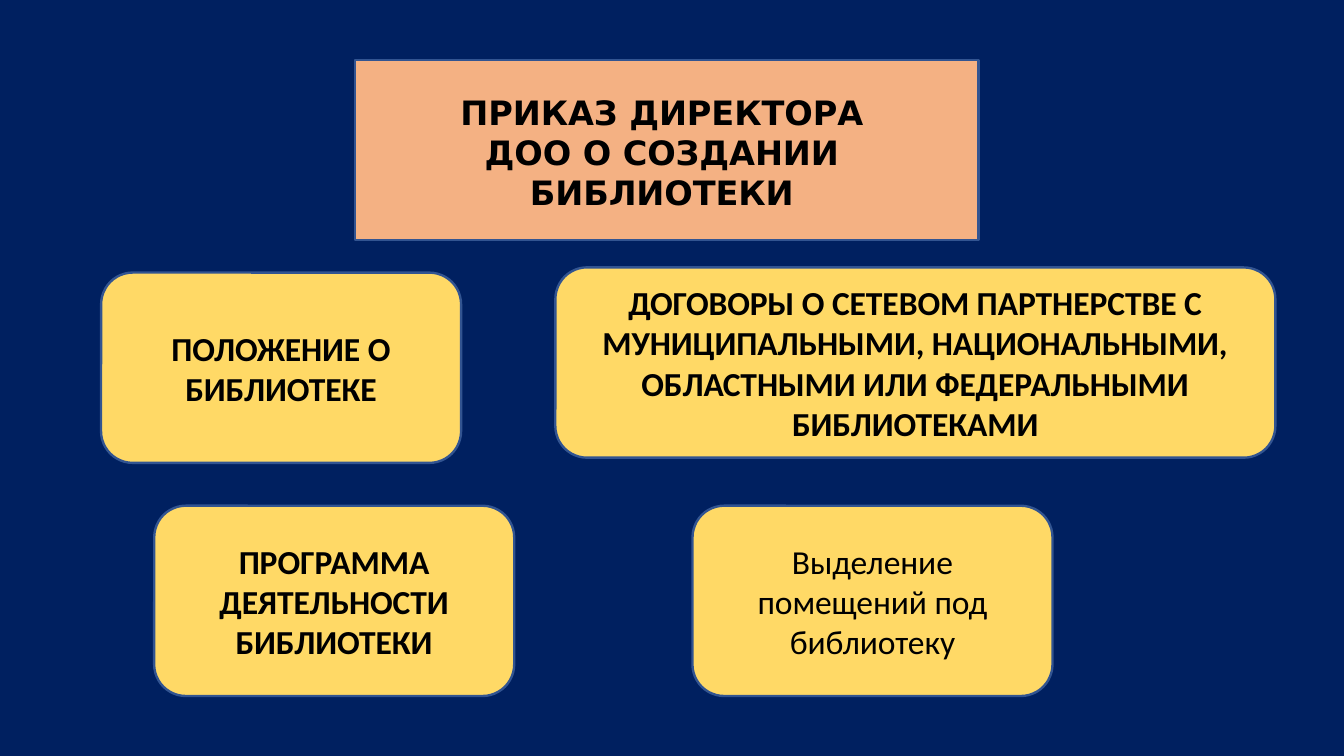
from pptx import Presentation
from pptx.dml.color import RGBColor
from pptx.enum.shapes import MSO_SHAPE as Shape
from pptx.enum.text import MSO_ANCHOR as Anchor, MSO_AUTO_SIZE as AutoSize, PP_ALIGN as Align
from pptx.util import Pt

COLOURS = {
    "background": "002060",
    "order": "F4B183",
    "document": "FFD966",
    "outline": "325491",
    "text": "000000",
}
TITLE_ONLY = 5
CARD_WIDTH, CARD_HEIGHT = 151.2, 79.9
TEXT_SIZE = 14.1

# left, top, width, paragraphs, bold
DOCUMENTS = [
    (42.5, 114.5, CARD_WIDTH, ["ПОЛОЖЕНИЕ О БИБЛИОТЕКЕ"], True),
    (233.3, 112.3, 2 * CARD_WIDTH,
     ["ДОГОВОРЫ О СЕТЕВОМ ПАРТНЕРСТВЕ С МУНИЦИПАЛЬНЫМИ, НАЦИОНАЛЬНЫМИ, "
      "ОБЛАСТНЫМИ ИЛИ ФЕДЕРАЛЬНЫМИ БИБЛИОТЕКАМИ"], True),
    (290.9, 212.4, CARD_WIDTH, ["Выделение помещений под библиотеку"], False),
    (64.8, 212.4, CARD_WIDTH, ["ПРОГРАММА", "ДЕЯТЕЛЬНОСТИ БИБЛИОТЕКИ"], True),
]


def colour(name):
    return RGBColor.from_string(COLOURS[name])


def paint(shape, fill):
    shape.fill.solid()
    shape.fill.fore_color.rgb = colour(fill)
    shape.line.color.rgb = colour("outline")
    shape.line.width = Pt(1)


def write(frame, paragraphs, font, bold):
    frame.word_wrap = True
    frame.auto_size = AutoSize.NONE
    frame.vertical_anchor = Anchor.MIDDLE
    frame.text = "\n".join(paragraphs)
    for para in frame.paragraphs:
        para.alignment = Align.CENTER
        para.line_spacing = 1.0
        para.space_before = Pt(0)
        para.font.name = font
        para.font.size = Pt(TEXT_SIZE)
        para.font.bold = bold
        para.font.color.rgb = colour("text")


def add_order(page, left, top, width, height):
    """Place the director's order, which is the slide title."""
    title = page.shapes.title
    title.left, title.top = Pt(left), Pt(top)
    title.width, title.height = Pt(width), Pt(height)
    paint(title, "order")
    frame = title.text_frame
    write(frame, ["ПРИКАЗ ДИРЕКТОРА ДОО О СОЗДАНИИ БИБЛИОТЕКИ"], "DejaVu Sans", True)
    frame.margin_left, frame.margin_right = Pt(34), Pt(38)
    frame.margin_top, frame.margin_bottom = Pt(5), Pt(3)


def add_document(page, left, top, width, height, paragraphs, bold):
    card = page.shapes.add_shape(
        Shape.ROUNDED_RECTANGLE, Pt(left), Pt(top), Pt(width), Pt(height))
    card.shadow.inherit = False
    paint(card, "document")
    write(card.text_frame, paragraphs, "Calibri", bold)


def main():
    deck = Presentation()
    deck.slide_width, deck.slide_height = Pt(564.5), Pt(317.5)
    page = deck.slides.add_slide(deck.slide_layouts[TITLE_ONLY])
    page.background.fill.solid()
    page.background.fill.fore_color.rgb = colour("background")
    add_order(page, 149, 25.2, 262.1, 75.6)
    for left, top, width, paragraphs, bold in DOCUMENTS:
        add_document(page, left, top, width, CARD_HEIGHT, paragraphs, bold)
    deck.save("out.pptx")


if __name__ == "__main__":
    main()
